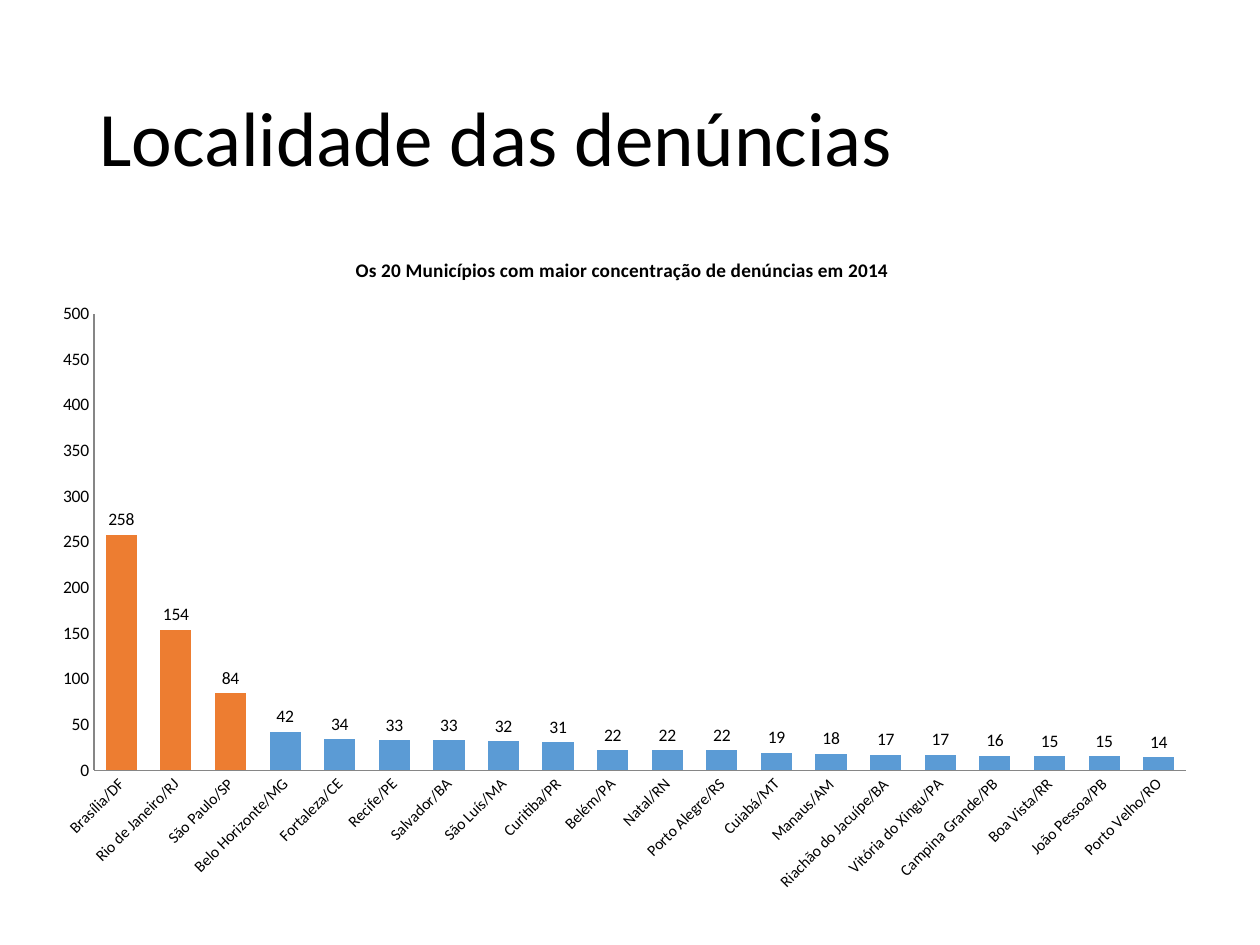
from lxml.etree import SubElement
from pptx import Presentation
from pptx.chart.data import CategoryChartData
from pptx.dml.color import RGBColor
from pptx.enum.chart import XL_CHART_TYPE, XL_LABEL_POSITION, XL_TICK_MARK
from pptx.enum.text import MSO_ANCHOR, PP_ALIGN
from pptx.oxml.ns import qn
from pptx.util import Inches, Pt

COLOURS = {"text": "000000", "bar": "5B9BD5", "highlight": "ED7D31", "axis": "868686"}
FONT = "Calibri"
TITLE = "Localidade das denúncias"
CHART_TITLE = "Os 20 Municípios com maior concentração de denúncias em 2014"
COMPLAINTS = [
    ("Brasília/DF", 258), ("Rio de Janeiro/RJ", 154), ("São Paulo/SP", 84),
    ("Belo Horizonte/MG", 42), ("Fortaleza/CE", 34), ("Recife/PE", 33),
    ("Salvador/BA", 33), ("São Luís/MA", 32), ("Curitiba/PR", 31),
    ("Belém/PA", 22), ("Natal/RN", 22), ("Porto Alegre/RS", 22),
    ("Cuiabá/MT", 19), ("Manaus/AM", 18), ("Riachão do Jacuípe/BA", 17),
    ("Vitória do Xingu/PA", 17), ("Campina Grande/PB", 16),
    ("Boa Vista/RR", 15), ("João Pessoa/PB", 15), ("Porto Velho/RO", 14),
]
HIGHLIGHTED = 3
TITLE_PLACE = {"left": 0.69, "top": 0.4, "width": 8.62, "height": 1.45}
CHART_PLACE = (0.28, 1.85, 9.32, 5.33)
PLOT_PLACE = {"x": 0.05, "y": 0.12, "w": 0.93, "h": 0.68}


def apply(target, **values):
    for name, value in values.items():
        setattr(target, name, value)


def colour(name):
    return RGBColor.from_string(COLOURS[name])


def style_font(font, size, bold=False):
    apply(font, name=FONT, size=Pt(size), bold=bold)
    font.color.rgb = colour("text")


def paint(fill, name):
    fill.solid()
    fill.fore_color.rgb = colour(name)


def add_title(page):
    box = page.shapes.title
    apply(box, **{name: Inches(value) for name, value in TITLE_PLACE.items()})
    apply(box.text_frame, text=TITLE, vertical_anchor=MSO_ANCHOR.MIDDLE, word_wrap=True)
    para = box.text_frame.paragraphs[0]
    apply(para, alignment=PP_ALIGN.LEFT, line_spacing=0.9)
    style_font(para.runs[0].font, 44)


def place_plot(chart):
    plot_area = chart.plots[0]._element.getparent()
    for old in plot_area.findall(qn("c:layout")):
        plot_area.remove(old)
    layout = SubElement(plot_area, qn("c:layout"))
    plot_area.insert(0, layout)
    manual = SubElement(layout, qn("c:manualLayout"))
    settings = {"layoutTarget": "inner", "xMode": "edge", "yMode": "edge", **PLOT_PLACE}
    for name, value in settings.items():
        SubElement(manual, qn(f"c:{name}")).set("val", str(value))


def add_chart(page):
    data = CategoryChartData()
    data.categories = [city for city, count in COMPLAINTS]
    data.add_series("Series 1", [count for city, count in COMPLAINTS])
    chart = page.shapes.add_chart(
        XL_CHART_TYPE.COLUMN_CLUSTERED, *map(Inches, CHART_PLACE), data
    ).chart
    style_font(chart.font, 10)
    apply(chart, has_legend=False, has_title=True)
    heading = chart.chart_title
    heading.include_in_layout = False
    heading.text_frame.text = CHART_TITLE
    style_font(heading.text_frame.paragraphs[0].runs[0].font, 11, True)

    apply(chart.value_axis, minimum_scale=0, maximum_scale=500, major_unit=50)
    for axis, size in ((chart.category_axis, 9), (chart.value_axis, 10)):
        apply(axis, has_major_gridlines=False,
              major_tick_mark=XL_TICK_MARK.NONE, minor_tick_mark=XL_TICK_MARK.NONE)
        style_font(axis.tick_labels.font, size)
        axis.format.line.color.rgb = colour("axis")
        axis.format.line.width = Pt(0.75)
    category_text = chart.category_axis._element.find(qn("c:txPr"))
    category_text.find(qn("a:bodyPr")).set("rot", "-2700000")

    plot = chart.plots[0]
    apply(plot, gap_width=75, vary_by_categories=False, has_data_labels=True)
    apply(plot.data_labels, show_value=True, position=XL_LABEL_POSITION.OUTSIDE_END)
    style_font(plot.data_labels.font, 10)
    bars = plot.series[0]
    paint(bars.format.fill, "bar")
    for index in range(HIGHLIGHTED):
        paint(bars.points[index].format.fill, "highlight")
    place_plot(chart)


def main():
    deck = Presentation()
    apply(deck, slide_width=Inches(10), slide_height=Inches(7.5))
    page = deck.slides.add_slide(deck.slide_layouts[5])
    add_title(page)
    add_chart(page)
    deck.save("out.pptx")


if __name__ == "__main__":
    main()
